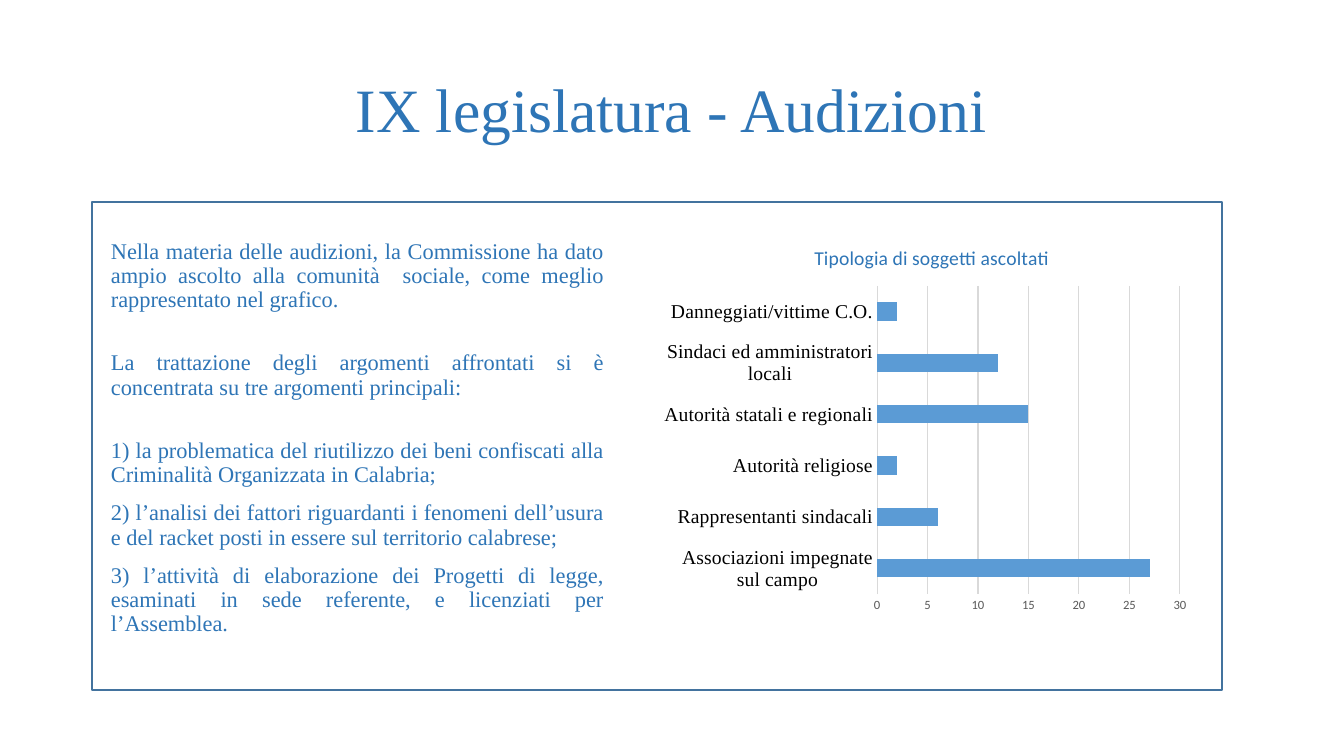
from dataclasses import dataclass

from lxml import etree
from pptx import Presentation
from pptx import util as u
from pptx.chart import data as chart_data
from pptx.dml import color
from pptx.enum import chart as chart_enum, shapes, text
from pptx.oxml import ns

EMU_PER_PX = 914400 / 100.8


@dataclass(frozen=True)
class Theme:
    heading: str = "2E75B6"
    bar: str = "5B9BD5"
    border: str = "43739E"
    grid: str = "D9D9D9"
    scale: str = "595959"
    label: str = "000000"
    serif: str = "Times New Roman"
    sans: str = "Calibri"
    title_size: int = 44
    body_size: int = 16
    chart_size: int = 14
    base_size: int = 10
    scale_size: int = 9


def px(value):
    return u.Emu(round(value * EMU_PER_PX))


def rgb(value):
    return color.RGBColor.from_string(value)


def apply(target, values):
    for name, value in values.items():
        setattr(target, name, value)


class SlideBuilder:
    def __init__(self, page, theme):
        self.page = page
        self.theme = theme

    def font(self, font, size, tint, name):
        apply(font, {"size": u.Pt(size), "name": name, "bold": False})
        font.color.rgb = rgb(tint)

    def line(self, line, tint, width):
        line.color.rgb = rgb(tint)
        line.width = u.Pt(width)

    def text(self, place, paragraphs, size, align, anchor):
        box = self.page.shapes.add_textbox(*map(px, place))
        frame = box.text_frame
        apply(frame, {"word_wrap": True, "vertical_anchor": anchor})
        for index, (wording, gap) in enumerate(paragraphs):
            para = frame.add_paragraph() if index else frame.paragraphs[0]
            apply(para, {"alignment": align, "line_spacing": 0.9,
                         "space_before": u.Pt(gap)})
            span = para.add_run()
            span.text = wording
            self.font(span.font, size, self.theme.heading, self.theme.serif)

    def border(self, place):
        box = self.page.shapes.add_shape(shapes.MSO_SHAPE.RECTANGLE, *map(px, place))
        box.shadow.inherit = False
        box.fill.background()
        self.line(box.line, self.theme.border, 1)

    def layout(self, parent, position, values):
        for old in parent.findall(ns.qn("c:layout")):
            parent.remove(old)
        layout = etree.Element(ns.qn("c:layout"))
        parent.insert(position, layout)
        manual = etree.SubElement(layout, ns.qn("c:manualLayout"))
        for tag, value in values.items():
            etree.SubElement(manual, ns.qn(f"c:{tag}")).set("val", str(value))

    def bar_chart(self, place, title, rows):
        theme = self.theme
        source = chart_data.CategoryChartData()
        source.categories = [label for label, _ in rows]
        source.add_series("Audizioni", [count for _, count in rows])
        chart = self.page.shapes.add_chart(
            chart_enum.XL_CHART_TYPE.BAR_CLUSTERED, *map(px, place), source).chart
        self.font(chart.font, theme.base_size, theme.label, theme.sans)
        chart.has_legend = False
        chart.has_title = True
        span = chart.chart_title.text_frame.paragraphs[0].add_run()
        span.text = title
        self.font(span.font, theme.chart_size, theme.heading, theme.sans)

        plot = chart.plots[0]
        apply(plot, {"gap_width": 182, "vary_by_categories": False})
        fill = plot.series[0].format.fill
        fill.solid()
        fill.fore_color.rgb = rgb(theme.bar)

        no_ticks = {"major_tick_mark": chart_enum.XL_TICK_MARK.NONE,
                    "minor_tick_mark": chart_enum.XL_TICK_MARK.NONE}
        names, values = chart.category_axis, chart.value_axis
        apply(names, no_ticks)
        apply(values, {**no_ticks, "minimum_scale": 0, "maximum_scale": 30,
                       "major_unit": 5, "has_major_gridlines": True})
        self.font(names.tick_labels.font, theme.chart_size, theme.label, theme.serif)
        self.font(values.tick_labels.font, theme.scale_size, theme.scale, theme.sans)
        self.line(names.format.line, theme.grid, 0.75)
        self.line(values.major_gridlines.format.line, theme.grid, 0.75)
        values.format.line.fill.background()

        area = chart.element.find(".//" + ns.qn("c:plotArea"))
        self.layout(area, 0, {"layoutTarget": "inner", "xMode": "edge", "yMode": "edge",
                              "x": 0.404, "y": 0.146, "w": 0.566, "h": 0.727})
        heading = chart.element.find(".//" + ns.qn("c:title"))
        self.layout(heading, 1, {"xMode": "edge", "yMode": "edge", "x": 0.28, "y": 0.04})


BODY = [
    ("Nella materia delle audizioni, la Commissione ha dato ampio ascolto alla "
     "comunità  sociale, come meglio rappresentato nel grafico.", 0),
    ("La trattazione degli argomenti affrontati si è concentrata su tre argomenti "
     "principali:", 28),
    ("1) la problematica del riutilizzo dei beni confiscati alla Criminalità "
     "Organizzata in Calabria;", 28),
    ("2) l’analisi dei fattori riguardanti i fenomeni dell’usura e del racket posti "
     "in essere sul territorio calabrese;", 10),
    ("3) l’attività di elaborazione dei Progetti di legge, esaminati in sede "
     "referente, e licenziati per l’Assemblea.", 10),
]
HEARINGS = [
    ("Associazioni impegnate sul campo", 27),
    ("Rappresentanti sindacali", 6),
    ("Autorità religiose", 2),
    ("Autorità statali e regionali", 15),
    ("Sindaci ed amministratori locali", 12),
    ("Danneggiati/vittime C.O.", 2),
]


def main():
    deck = Presentation()
    apply(deck, {"slide_width": px(1344), "slide_height": px(756)})
    theme = Theme()
    builder = SlideBuilder(deck.slides.add_slide(deck.slide_layouts[6]), theme)
    builder.text((92, 40, 1159, 146), [("IX legislatura - Audizioni", 0)],
                 theme.title_size, text.PP_ALIGN.CENTER, text.MSO_ANCHOR.MIDDLE)
    builder.text((101, 235, 513, 437), BODY,
                 theme.body_size, text.PP_ALIGN.JUSTIFY, text.MSO_ANCHOR.TOP)
    builder.bar_chart((661, 224, 535, 424), "Tipologia di soggetti ascoltati", HEARINGS)
    builder.border((92, 202, 1130, 488))
    deck.save("out.pptx")


if __name__ == "__main__":
    main()
